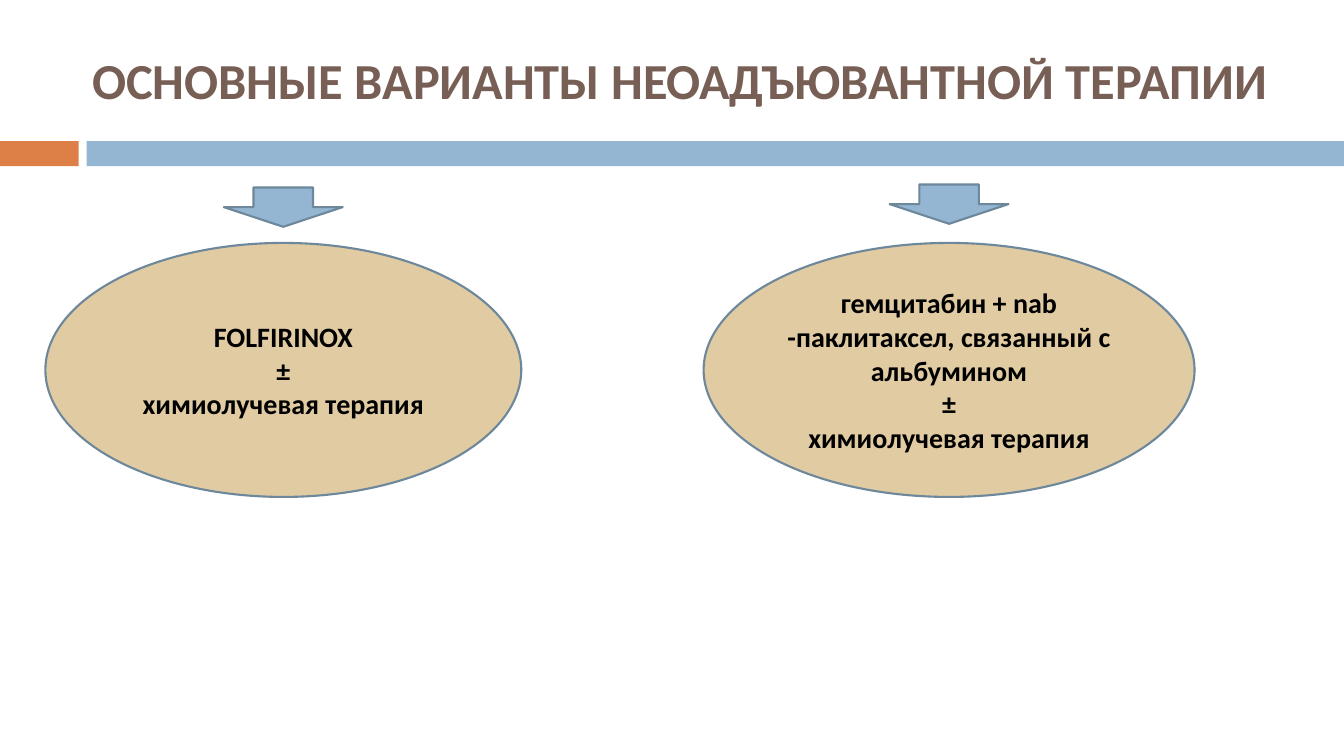
from pptx import Presentation
from pptx.dml.color import RGBColor
from pptx.enum.shapes import MSO_SHAPE as Preset
from pptx.enum.text import MSO_ANCHOR as Anchor, PP_ALIGN as Align
from pptx.util import Inches, Pt

ORANGE, BLUE, SAND = "DD8047", "94B6D2", "E0CBA3"
OUTLINE, BROWN, BLACK = "6D879B", "775F55", "000000"


def color(value):
    return RGBColor.from_string(value)


class SlideBuilder:
    """Places elements by percent of the slide's width and height."""

    font_name = "Calibri"
    outline_width = Pt(1.5)

    def __init__(self, deck):
        self.deck = deck
        self.page = deck.slides.add_slide(deck.slide_layouts[6])

    def area(self, left, top, width, height):
        across, down = self.deck.slide_width / 100, self.deck.slide_height / 100
        return [round(value * unit) for value, unit in
                zip((left, top, width, height), (across, down) * 2)]

    def add_lines(self, box, lines, size, ink):
        frame = box.text_frame
        frame.word_wrap = True
        frame.vertical_anchor = Anchor.MIDDLE
        formats = {"name": self.font_name, "size": Pt(size), "bold": True}
        for index, line in enumerate(lines):
            para = frame.add_paragraph() if index else frame.paragraphs[0]
            para.alignment = Align.CENTER
            span = para.add_run()
            span.text = line
            for key, value in formats.items():
                setattr(span.font, key, value)
            span.font.color.rgb = color(ink)

    def title(self, place, text):
        box = self.page.shapes.add_textbox(*self.area(*place))
        self.add_lines(box, [text], 36, BROWN)

    def shape(self, preset, place, fill, outline=None, lines=()):
        box = self.page.shapes.add_shape(preset, *self.area(*place))
        box.shadow.inherit = False
        box.fill.solid()
        box.fill.fore_color.rgb = color(fill)
        if outline:
            box.line.color.rgb = color(outline)
            box.line.width = self.outline_width
        else:
            box.line.fill.background()
        self.add_lines(box, lines, 20, BLACK)

    def option(self, center, width, arrow_top, lines):
        arrow_width = 8.85
        self.shape(Preset.OVAL, (center - width / 2, 32.13, width, 33.6),
                   SAND, OUTLINE, lines)
        self.shape(Preset.DOWN_ARROW,
                   (center - arrow_width / 2, arrow_top, arrow_width, 5.2),
                   BLUE, OUTLINE)


def main():
    deck = Presentation()
    deck.slide_width, deck.slide_height = Inches(13.33), Inches(7.5)
    builder = SlideBuilder(deck)

    # Header band and title
    for left, width, fill in ((0, 5.85, ORANGE), (6.45, 93.55, BLUE)):
        builder.shape(Preset.RECTANGLE, (left, 18.67, width, 3.33), fill)
    builder.title((1.58, 3.33, 98.05, 14.4),
                  "ОСНОВНЫЕ ВАРИАНТЫ НЕОАДЪЮВАНТНОЙ ТЕРАПИИ")

    # Therapy options, each under its arrow
    common = ["±", "химиолучевая терапия"]
    builder.option(21.08, 35.41, 24.8, ["FOLFIRINOX"] + common)
    builder.option(70.62, 36.53, 24.4,
                   ["гемцитабин + nab -паклитаксел, связанный с альбумином"] + common)

    deck.save("out.pptx")


if __name__ == "__main__":
    main()
